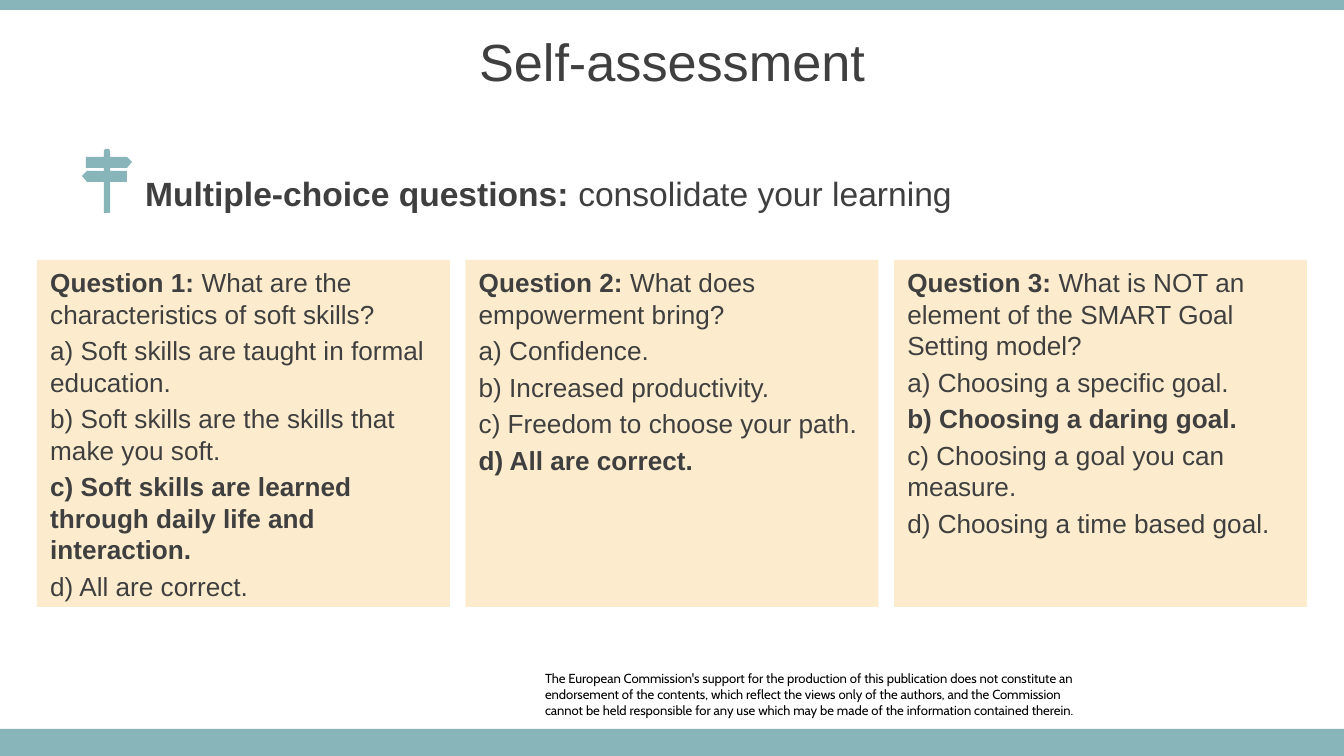
"""Build the self-assessment slide with three multiple-choice question cards."""
from pptx import Presentation
from pptx.dml.color import RGBColor
from pptx.enum.shapes import MSO_SHAPE
from pptx.enum.text import MSO_ANCHOR, PP_ALIGN
from pptx.util import Emu, Pt

RECTANGLE = MSO_SHAPE.RECTANGLE
TOP, MIDDLE = MSO_ANCHOR.TOP, MSO_ANCHOR.MIDDLE
LEFT, CENTER = PP_ALIGN.LEFT, PP_ALIGN.CENTER

EMU_PER_PX = 914400 / 134.4
SLIDE_WIDTH, SLIDE_HEIGHT = 1344, 756
TEAL, CREAM, DARK, BLACK = "87B5BA", "FCECCD", "3F3F3F", "000000"

CARD_MARGIN, CARD_TOP, CARD_WIDTH, CARD_HEIGHT = 37, 260, 413, 347

QUESTIONS = [
    ("Question 1: ", "What are the characteristics of soft skills?",
     ["a) Soft skills are taught in formal education.",
      "b) Soft skills are the skills that make you soft.",
      "c) Soft skills are learned through daily life and interaction.",
      "d) All are correct."], 2),
    ("Question 2: ", "What does empowerment bring?",
     ["a) Confidence.",
      "b) Increased productivity.",
      "c) Freedom to choose your path.",
      "d) All are correct."], 3),
    ("Question 3: ", "What is NOT an element of the SMART Goal Setting model?",
     ["a) Choosing a specific goal.",
      "b) Choosing a daring goal.",
      "c) Choosing a goal you can measure.",
      "d) Choosing a time based goal."], 1),
]

DISCLAIMER = [
    "The European Commission's support for the production of this publication "
    "does not constitute an endorsement of the contents, which reflect the views "
    "only of the authors, and the Commission",
    "cannot be held responsible for any use which may be made of the information "
    "contained therein.",
]

SIGNPOST = [
    (104, 151), (105, 149), (109, 149), (110, 151), (110, 157), (127, 157),
    (132, 162), (127, 168), (110, 168), (110, 171), (127, 171), (127, 182),
    (110, 182), (110, 213), (104, 213), (104, 182), (87, 182), (82, 176),
    (87, 171), (104, 171), (104, 168), (86, 168), (86, 157), (104, 157),
]


def px(length):
    """Turn pixels into EMU."""
    return Emu(round(length * EMU_PER_PX))


def color(value):
    """Turn a hex string into a colour."""
    return RGBColor.from_string(value)


def paint(shape, fill):
    """Give a shape a flat fill without line or shadow."""
    shape.shadow.inherit = False
    shape.fill.solid()
    shape.fill.fore_color.rgb = color(fill)
    shape.line.fill.background()


def add_rectangle(slide, left, top, width, height, fill):
    """Add a flat rectangle."""
    shape = slide.shapes.add_shape(RECTANGLE, px(left), px(top), px(width), px(height))
    paint(shape, fill)
    return shape


def add_signpost(slide):
    """Add the signpost icon as one outline."""
    builder = slide.shapes.build_freeform(*SIGNPOST[0], scale=EMU_PER_PX)
    builder.add_line_segments(SIGNPOST[1:], close=True)
    paint(builder.convert_to_shape(), TEAL)


def write(shape, paragraphs, size, font="Arial", fill=DARK, anchor=TOP,
          align=LEFT, space_before=0):
    """Fill a shape with paragraphs, each a list of (text, bold) runs."""
    frame = shape.text_frame
    frame.word_wrap = True
    frame.vertical_anchor = anchor
    for index, runs in enumerate(paragraphs):
        paragraph = frame.add_paragraph() if index else frame.paragraphs[0]
        paragraph.alignment = align
        paragraph.space_before = Pt(space_before if index else 0)
        for text, bold in runs:
            run = paragraph.add_run()
            run.text = text
            run.font.name = font
            run.font.size = Pt(size)
            run.font.bold = bold
            run.font.color.rgb = color(fill)


def add_text(slide, left, top, width, height, paragraphs, size, **style):
    """Add a text box and return it."""
    box = slide.shapes.add_textbox(px(left), px(top), px(width), px(height))
    write(box, paragraphs, size, **style)
    return box


def add_question(slide, left, label, question, answers, correct):
    """Add a question card with its correct answer in bold."""
    card = add_rectangle(slide, left, CARD_TOP, CARD_WIDTH, CARD_HEIGHT, CREAM)
    paragraphs = [[(label, True), (question, False)]]
    paragraphs += [[(answer, index == correct)] for index, answer in enumerate(answers)]
    write(card, paragraphs, 14, space_before=2.8)


def add_disclaimer(slide):
    """Add the small print above the bottom bar."""
    box = add_text(slide, 545, 671, 560, 47, [[(line, False)] for line in DISCLAIMER],
                   7, font="Cabin", fill=BLACK)
    frame = box.text_frame
    frame.margin_left = frame.margin_right = frame.margin_top = frame.margin_bottom = 0


def main():
    """Build and save the presentation."""
    presentation = Presentation()
    presentation.slide_width, presentation.slide_height = px(SLIDE_WIDTH), px(SLIDE_HEIGHT)
    slide = presentation.slides.add_slide(presentation.slide_layouts[6])

    add_disclaimer(slide)
    add_rectangle(slide, 0, 729, SLIDE_WIDTH, 27, TEAL)
    add_rectangle(slide, 0, 0, SLIDE_WIDTH, 10, TEAL)
    add_text(slide, 0, 18, SLIDE_WIDTH, 85, [[("Self-assessment", False)]], 28,
             anchor=MIDDLE, align=CENTER)
    add_text(slide, 132, 172, 899, 42,
             [[("Multiple-choice questions: ", True), ("consolidate your learning", False)]],
             18, anchor=MIDDLE)
    add_signpost(slide)

    pitch = (SLIDE_WIDTH - 2 * CARD_MARGIN - CARD_WIDTH) / (len(QUESTIONS) - 1)
    for index, question in enumerate(QUESTIONS):
        add_question(slide, CARD_MARGIN + index * pitch, *question)

    presentation.save("out.pptx")


if __name__ == "__main__":
    main()
